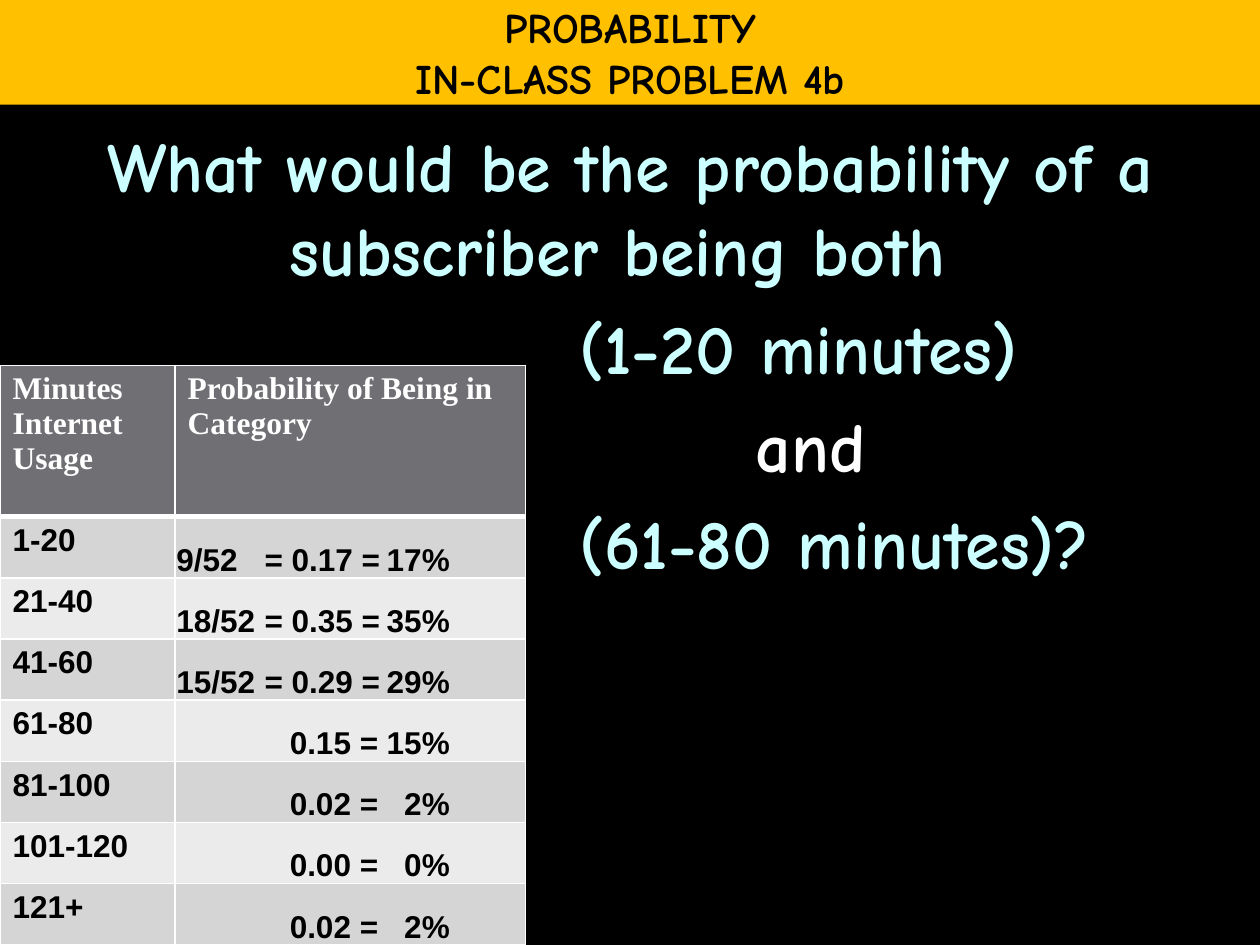
from dataclasses import dataclass

from lxml.etree import SubElement
from pptx import Presentation
from pptx.dml.color import RGBColor
from pptx.enum.text import MSO_ANCHOR, MSO_AUTO_SIZE, PP_ALIGN
from pptx.oxml.ns import qn
from pptx.util import Inches, Pt


@dataclass(frozen=True)
class Theme:
    """Colours, fonts and type sizes of the slide."""
    back: str = "000000"
    banner: str = "FFC000"
    dark: str = "000000"
    light: str = "FFFFFF"
    question: str = "CCFFFF"
    header: str = "6F6F74"
    bands: tuple = ("D5D5D6", "EBEBEC")
    display: str = "Comic Neue"
    serif: str = "Times New Roman"
    sans: str = "Arial"
    title_size: int = 24
    question_size: int = 40
    table_size: int = 18


T = Theme()
W, H = Inches(10), Inches(7.5)
TITLE = ["PROBABILITY", "IN-CLASS PROBLEM 4b"]
QUESTION = [
    ("What would be the probability of a subscriber being both ", T.question, None),
    ("(1-20 minutes)", T.question, 4),
    ("and", T.light, 5.4),
    ("(61-80 minutes)?", T.question, 4),
]
HEADER = ["Minutes Internet Usage", "Probability of Being in Category"]
ROWS = [
    ("1-20", "9/52\t= 0.17 =\t17%"),
    ("21-40", "18/52\t= 0.35 =\t35%"),
    ("41-60", "15/52\t= 0.29 =\t29%"),
    ("61-80", "\t0.15 =\t15%"),
    ("81-100", "\t0.02 =\t2%"),
    ("101-120", "\t0.00 =\t0%"),
    ("121+", "\t0.02 =\t2%"),
]
FRACTION_STOP, DECIMAL_STOP, PERCENT_STOP = 0.7, 0.9, 2.17


def set_attrs(obj, values):
    """Set each named attribute of an object."""
    for name, value in values.items():
        setattr(obj, name, value)


def set_fill(obj, color):
    """Give an object a solid fill."""
    obj.fill.solid()
    obj.fill.fore_color.rgb = RGBColor.from_string(color)


def set_frame(tf, margins, anchor):
    """Set the insets and the anchor of a text frame or a cell."""
    sides = ("margin_left", "margin_top", "margin_right", "margin_bottom")
    set_attrs(tf, {side: Inches(m) for side, m in zip(sides, margins)})
    tf.vertical_anchor = anchor


def add_text(p, text, font, size, color):
    """Add one bold run to a paragraph."""
    r = p.add_run()
    r.text = text
    set_attrs(r.font, {"name": font, "size": Pt(size), "bold": True})
    r.font.color.rgb = RGBColor.from_string(color)


def next_paragraph(tf, index):
    """Return the first paragraph, or a new one after it."""
    return tf.add_paragraph() if index else tf.paragraphs[0]


def add_title(s):
    """Turn the title placeholder into the banner."""
    sp = s.shapes.title
    set_attrs(sp, {"left": 0, "top": 0, "width": W, "height": Inches(0.83)})
    set_fill(sp, T.banner)
    tf = sp.text_frame
    set_attrs(tf, {"word_wrap": True, "auto_size": MSO_AUTO_SIZE.NONE})
    set_frame(tf, (0.1, 0.05, 0.1, 0.05), MSO_ANCHOR.MIDDLE)
    for i, line in enumerate(TITLE):
        p = next_paragraph(tf, i)
        set_attrs(p, {"alignment": PP_ALIGN.CENTER, "space_before": Pt(0)})
        add_text(p, line, T.display, T.title_size, T.dark)


def add_question(s):
    """Add the question, with its conditions indented beside the table."""
    sp = s.shapes.add_textbox(int(W * 0.05), Inches(0.92), int(W * 0.9), Inches(6.17))
    tf = sp.text_frame
    tf.word_wrap = True
    set_frame(tf, (0.1, 0.05, 0.1, 0.05), MSO_ANCHOR.TOP)
    for i, (text, color, indent) in enumerate(QUESTION):
        p = next_paragraph(tf, i)
        p.space_before = Pt(T.question_size * 0.2)
        if indent is None:
            p.alignment = PP_ALIGN.CENTER
        else:
            p.alignment = PP_ALIGN.LEFT
            p._p.get_or_add_pPr().set("marL", str(Inches(indent)))
        add_text(p, text, T.display, T.question_size, color)


def set_tabs(p, stops):
    """Add tab stops, given as position and alignment pairs."""
    tabs = SubElement(p._p.get_or_add_pPr(), qn("a:tabLst"))
    for pos, align in stops:
        SubElement(tabs, qn("a:tab"), pos=str(Inches(pos)), algn=align)


def set_borders(cell, widths):
    """Draw the cell borders, with widths in points by side."""
    tcPr = cell._tc.get_or_add_tcPr()
    for side, width in widths.items():
        ln = SubElement(tcPr, qn(f"a:ln{side}"), w=str(Pt(width)))
        SubElement(SubElement(ln, qn("a:solidFill")), qn("a:srgbClr"), val=T.light)


def fill_cell(cell, text, row, col):
    """Fill and format one cell by its place in the table."""
    is_head, is_sum = row == 0, row > 0 and col == 1
    set_borders(cell, {"L": 1, "R": 1, "T": 3 if row == 1 else 1, "B": 3 if is_head else 1})
    set_fill(cell, T.header if is_head else T.bands[(row - 1) % 2])
    p = cell.text_frame.paragraphs[0]
    if is_sum:
        set_frame(cell, (0.01, 0.01, 0.01, 0), MSO_ANCHOR.BOTTOM)
        first = DECIMAL_STOP if text.startswith("\t") else FRACTION_STOP
        set_tabs(p, [(first, "l"), (PERCENT_STOP, "r")])
    else:
        set_frame(cell, (0.1, 0.05, 0.1, 0.05), MSO_ANCHOR.TOP)
    font, color = (T.serif, T.light) if is_head else (T.sans, T.dark)
    add_text(p, text, font, T.table_size, color)


def add_usage_table(s):
    """Add the table of usage and probability at the lower left."""
    data = [HEADER, *ROWS]
    width, height, head = Inches(4.17), Inches(4.6), Inches(1.2)
    table = s.shapes.add_table(len(data), 2, 0, H - height, width, height).table
    for col, share in zip(table.columns, (1, 2)):
        col.width = width * share // 3
    for i, (row, texts) in enumerate(zip(table.rows, data)):
        row.height = (height - head) // len(ROWS) if i else head
        for j, text in enumerate(texts):
            fill_cell(table.cell(i, j), text, i, j)


def main():
    """Build the slide and save it."""
    prs = Presentation()
    set_attrs(prs, {"slide_width": W, "slide_height": H})
    s = prs.slides.add_slide(prs.slide_layouts[5])
    set_fill(s.background, T.back)
    add_question(s)
    add_title(s)
    add_usage_table(s)
    prs.save("out.pptx")


if __name__ == "__main__":
    main()
